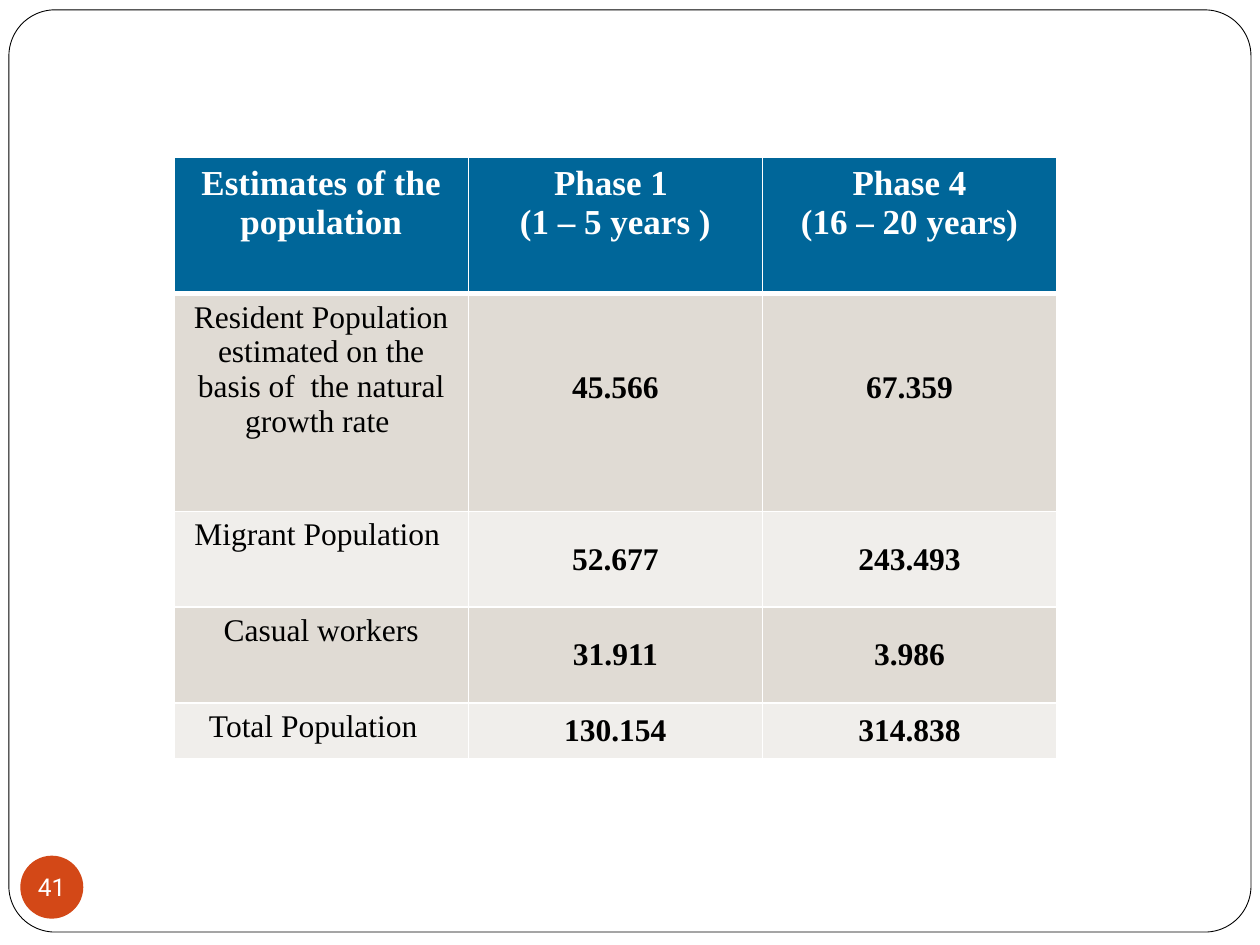
from dataclasses import dataclass

from lxml import etree
from pptx import Presentation
from pptx.dml.color import RGBColor
from pptx.enum.shapes import MSO_SHAPE
from pptx.enum.text import MSO_ANCHOR, PP_ALIGN
from pptx.oxml.ns import qn
from pptx.util import Cm, Pt

ROUNDED, OVAL = MSO_SHAPE.ROUNDED_RECTANGLE, MSO_SHAPE.OVAL
TOP, MIDDLE = MSO_ANCHOR.TOP, MSO_ANCHOR.MIDDLE
CENTER = PP_ALIGN.CENTER


@dataclass(frozen=True)
class Theme:
    white: str = "FFFFFF"
    black: str = "000000"
    header: str = "006699"
    bands: tuple = ("F0EEEB", "E0DBD4")
    badge: str = "D34817"
    table_font: str = "Times New Roman"
    badge_font: str = "Roboto"
    header_size: int = 20
    body_size: int = 18
    badge_size: int = 14


theme = Theme()


def write(tf, text, font, size, color, bold=False):
    tf.text = text
    for p in tf.paragraphs:
        p.alignment = CENTER
        for r in p.runs:
            r.font.name = font
            r.font.size = Pt(size)
            r.font.bold = bold
            r.font.color.rgb = RGBColor.from_string(color)


def set_borders(cell, widths):
    tcPr = cell._tc.get_or_add_tcPr()
    for i, (side, width) in enumerate(widths.items()):
        ln = etree.Element(qn(f"a:ln{side}"), w=str(Pt(width)))
        fill = etree.SubElement(ln, qn("a:solidFill"))
        etree.SubElement(fill, qn("a:srgbClr"), val=theme.white)
        tcPr.insert(i, ln)


prs = Presentation()
prs.slide_width, prs.slide_height = Cm(25.4), Cm(19.05)
s = prs.slides.add_slide(prs.slide_layouts[6])

frame = s.shapes.add_shape(ROUNDED, Cm(0.18), Cm(0.2), Cm(25.04), Cm(18.59))
frame.adjustments[0] = 0.05
frame.shadow.inherit = False
frame.fill.solid()
frame.fill.fore_color.rgb = RGBColor.from_string(theme.white)
frame.line.color.rgb = RGBColor.from_string(theme.black)
frame.line.width = Pt(0.5)

rows = [
    ("Estimates of the population", "Phase 1 \n(1 – 5 years )", "Phase 4\n(16 – 20 years)"),
    ("Resident Population estimated on the basis of  the natural growth rate ", "45.566", "67.359"),
    ("Migrant Population ", "52.677", "243.493"),
    ("Casual workers", "31.911", "3.986"),
    ("Total Population  ", "130.154", "314.838"),
]
heights = [2.74, 4.39, 1.93, 1.93, 1.12]
column_width = 5.93

table = s.shapes.add_table(
    len(rows), 3, Cm(3.51), Cm(3.18), Cm(3 * column_width), Cm(sum(heights))
).table
for column in table.columns:
    column.width = Cm(column_width)

for i, (values, height) in enumerate(zip(rows, heights)):
    table.rows[i].height = Cm(height)
    is_header = i == 0
    for j, text in enumerate(values):
        cell = table.cell(i, j)
        size = theme.header_size if is_header else theme.body_size
        color = theme.white if is_header else theme.black
        write(cell.text_frame, text, theme.table_font, size, color, is_header or j > 0)
        cell.vertical_anchor = MIDDLE if i > 1 and j > 0 else TOP
        if i == 1 and j > 0:
            cell.margin_top = Cm(1.54)
        cell.fill.solid()
        band = theme.header if is_header else theme.bands[i % 2]
        cell.fill.fore_color.rgb = RGBColor.from_string(band)
        set_borders(cell, {"L": 1, "R": 1, "T": 3 if i == 1 else 1, "B": 3 if is_header else 1})

badge = s.shapes.add_shape(OVAL, Cm(0.41), Cm(17.25), Cm(1.27), Cm(1.27))
badge.shadow.inherit = False
badge.fill.solid()
badge.fill.fore_color.rgb = RGBColor.from_string(theme.badge)
badge.line.fill.background()
tf = badge.text_frame
tf.margin_left = tf.margin_right = tf.margin_top = tf.margin_bottom = 0
tf.word_wrap = False
tf.vertical_anchor = MIDDLE
write(tf, "41", theme.badge_font, theme.badge_size, theme.white)

prs.save("out.pptx")
